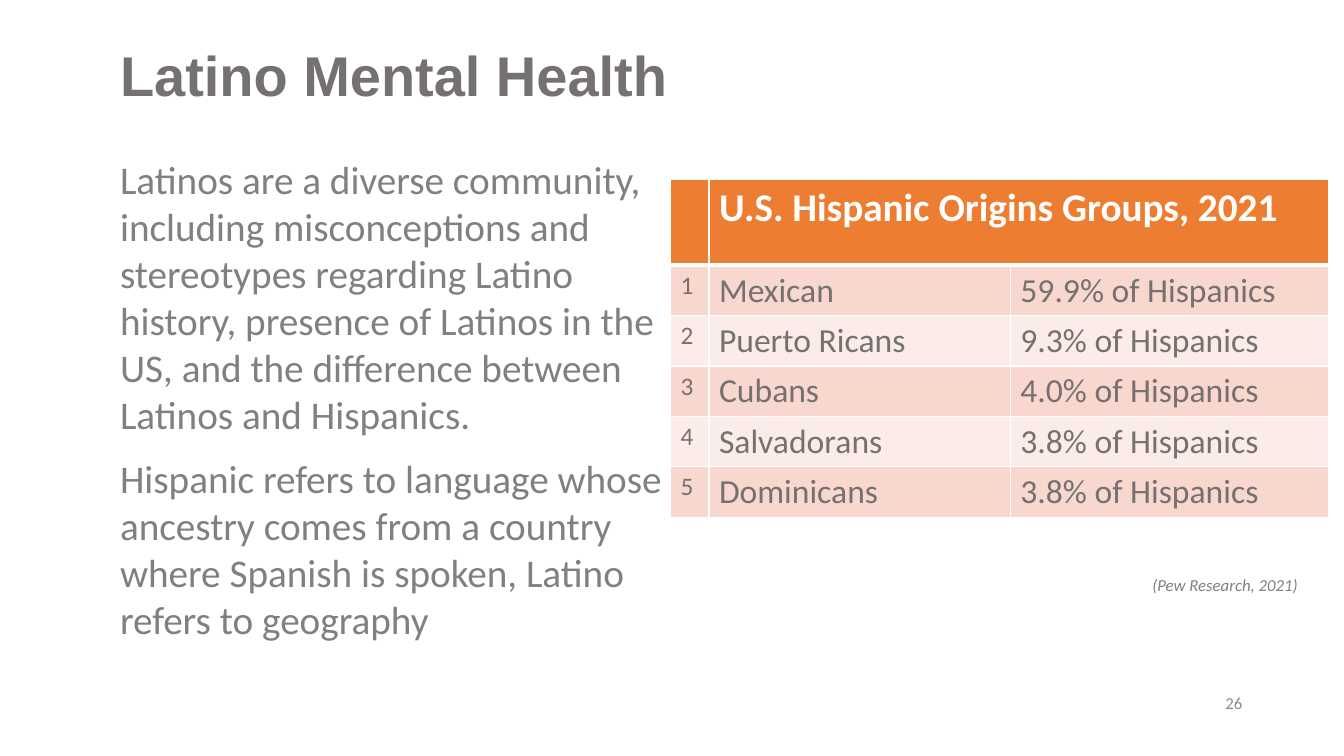
import dataclasses
import typing

import lxml.etree
import pptx
import pptx.dml.color
import pptx.enum.text
import pptx.oxml.ns
import pptx.util

SLIDE_WIDTH = pptx.util.Inches(13.33)
SLIDE_HEIGHT = pptx.util.Inches(7.5)
WHITE, ORANGE, DARK_GREY, GREY, PALE_GREY = "FFFFFF", "ED7D31", "767171", "808080", "8C8C8C"
ROW_FILLS = ("F8D7CE", "FCECE8")
TABLE_COLUMNS = (0.38, 2.99, 3.16)
HEADER_HEIGHT, ROW_HEIGHT = 0.85, 0.5


@dataclasses.dataclass(frozen=True)
class Area:
    """A box given as shares of the slide's width and height."""
    left: float
    top: float
    width: float
    height: float

    def lengths(self) -> tuple[int, int, int, int]:
        return (round(self.left * SLIDE_WIDTH), round(self.top * SLIDE_HEIGHT),
                round(self.width * SLIDE_WIDTH), round(self.height * SLIDE_HEIGHT))


@dataclasses.dataclass(frozen=True)
class TextStyle:
    size: float
    colour: str
    font: str = "Calibri"
    bold: bool = False
    italic: bool = False


@dataclasses.dataclass(frozen=True)
class OriginGroup:
    name: str
    share: str


TITLE_AREA = Area(0.0818, 0.052, 0.828, 0.104)
BODY_AREA = Area(0.0818, 0.1987, 0.429, 0.664)
TABLE_AREA = Area(0.499, 0.2373, 0.49, 0.4467)
SOURCE_AREA = Area(0.85, 0.74, 0.138, 0.0493)
NUMBER_AREA = Area(0.7067, 0.9027, 0.225, 0.0533)

HEADER_STYLE = TextStyle(28, WHITE, bold=True)
RANK_STYLE = TextStyle(18, DARK_GREY)
CELL_STYLE = TextStyle(24, DARK_GREY)

BODY_PARAGRAPHS = (
    "Latinos are a diverse community, including misconceptions and stereotypes regarding "
    "Latino history, presence of Latinos in the US, and the difference between Latinos and "
    "Hispanics.",
    "Hispanic refers to language whose ancestry comes from a country where Spanish is spoken, "
    "Latino refers to geography",
)
ORIGIN_GROUPS = (
    OriginGroup("Mexican", "59.9% of Hispanics"),
    OriginGroup("Puerto Ricans", "9.3% of Hispanics"),
    OriginGroup("Cubans", "4.0% of Hispanics"),
    OriginGroup("Salvadorans", "3.8% of Hispanics"),
    OriginGroup("Dominicans", "3.8% of Hispanics"),
)


def colour(value: str) -> pptx.dml.color.RGBColor:
    return pptx.dml.color.RGBColor.from_string(value)


def add_run(paragraph: typing.Any, text: str, style: TextStyle) -> None:
    run = paragraph.add_run()
    run.text = text
    run.font.name = style.font
    run.font.size = pptx.util.Pt(style.size)
    run.font.bold = style.bold
    run.font.italic = style.italic
    run.font.color.rgb = colour(style.colour)


def place(shape: typing.Any, area: Area) -> None:
    shape.left, shape.top, shape.width, shape.height = area.lengths()


def fill_title(shape: typing.Any) -> None:
    place(shape, TITLE_AREA)
    frame = shape.text_frame
    frame.auto_size = pptx.enum.text.MSO_AUTO_SIZE.NONE
    frame.vertical_anchor = pptx.enum.text.MSO_ANCHOR.MIDDLE
    paragraph = frame.paragraphs[0]
    paragraph.alignment = pptx.enum.text.PP_ALIGN.LEFT
    paragraph.line_spacing = 0.9
    add_run(paragraph, "Latino Mental Health", TextStyle(40, DARK_GREY, "Arial", bold=True))


def fill_body(shape: typing.Any) -> None:
    place(shape, BODY_AREA)
    frame = shape.text_frame
    frame.auto_size = pptx.enum.text.MSO_AUTO_SIZE.NONE
    for index, text in enumerate(BODY_PARAGRAPHS):
        paragraph = frame.add_paragraph() if index else frame.paragraphs[0]
        properties = paragraph._p.get_or_add_pPr()
        properties.set("marL", "0")
        properties.set("indent", "0")
        lxml.etree.SubElement(properties, pptx.oxml.ns.qn("a:buNone"))
        paragraph.space_before = pptx.util.Pt(6 if index else 0)
        paragraph.space_after = pptx.util.Pt(6)
        add_run(paragraph, text, TextStyle(28, GREY))


def add_label(slide: typing.Any, area: Area, text: str, style: TextStyle) -> typing.Any:
    """Add a one-line text box and return it for further layout."""
    label = slide.shapes.add_textbox(*area.lengths())
    label.text_frame.word_wrap = True
    add_run(label.text_frame.paragraphs[0], text, style)
    return label


def paint_cell(cell: typing.Any, fill: str, bottom_width: float = 1) -> None:
    """Give the cell white borders and then its fill, in the order the schema asks for."""
    properties = cell._tc.get_or_add_tcPr()
    for side, width in (("L", 1), ("R", 1), ("T", 1), ("B", bottom_width)):
        line = lxml.etree.SubElement(properties, pptx.oxml.ns.qn(f"a:ln{side}"),
                                     w=str(pptx.util.Pt(width)))
        solid = lxml.etree.SubElement(line, pptx.oxml.ns.qn("a:solidFill"))
        lxml.etree.SubElement(solid, pptx.oxml.ns.qn("a:srgbClr"), val=WHITE)
    cell.fill.solid()
    cell.fill.fore_color.rgb = colour(fill)


def add_origins_table(slide: typing.Any) -> None:
    table = slide.shapes.add_table(len(ORIGIN_GROUPS) + 1, len(TABLE_COLUMNS),
                                   *TABLE_AREA.lengths()).table
    for column, width in zip(table.columns, TABLE_COLUMNS):
        column.width = pptx.util.Inches(width)
    for index, row in enumerate(table.rows):
        row.height = pptx.util.Inches(ROW_HEIGHT if index else HEADER_HEIGHT)

    for cell in table.rows[0].cells:
        paint_cell(cell, ORANGE, bottom_width=3)
    header = table.cell(0, 1)
    header.merge(table.cell(0, 2))
    add_run(header.text_frame.paragraphs[0], "U.S. Hispanic Origins Groups, 2021", HEADER_STYLE)

    for rank, group in enumerate(ORIGIN_GROUPS, start=1):
        texts = (str(rank), group.name, group.share)
        styles = (RANK_STYLE, CELL_STYLE, CELL_STYLE)
        for cell, text, style in zip(table.rows[rank].cells, texts, styles):
            paint_cell(cell, ROW_FILLS[(rank - 1) % len(ROW_FILLS)])
            add_run(cell.text_frame.paragraphs[0], text, style)


def main() -> None:
    presentation = pptx.Presentation()
    presentation.slide_width = SLIDE_WIDTH
    presentation.slide_height = SLIDE_HEIGHT
    slide = presentation.slides.add_slide(presentation.slide_layouts[1])
    fill_title(slide.shapes.title)
    fill_body(slide.placeholders[1])
    source = add_label(slide, SOURCE_AREA, "(Pew Research, 2021)", TextStyle(12, GREY, italic=True))
    source.text_frame.paragraphs[0].line_spacing = 1.5
    number = add_label(slide, NUMBER_AREA, "26", TextStyle(12, PALE_GREY))
    number.text_frame.vertical_anchor = pptx.enum.text.MSO_ANCHOR.MIDDLE
    number.text_frame.paragraphs[0].alignment = pptx.enum.text.PP_ALIGN.RIGHT
    add_origins_table(slide)
    presentation.save("out.pptx")


if __name__ == "__main__":
    main()
